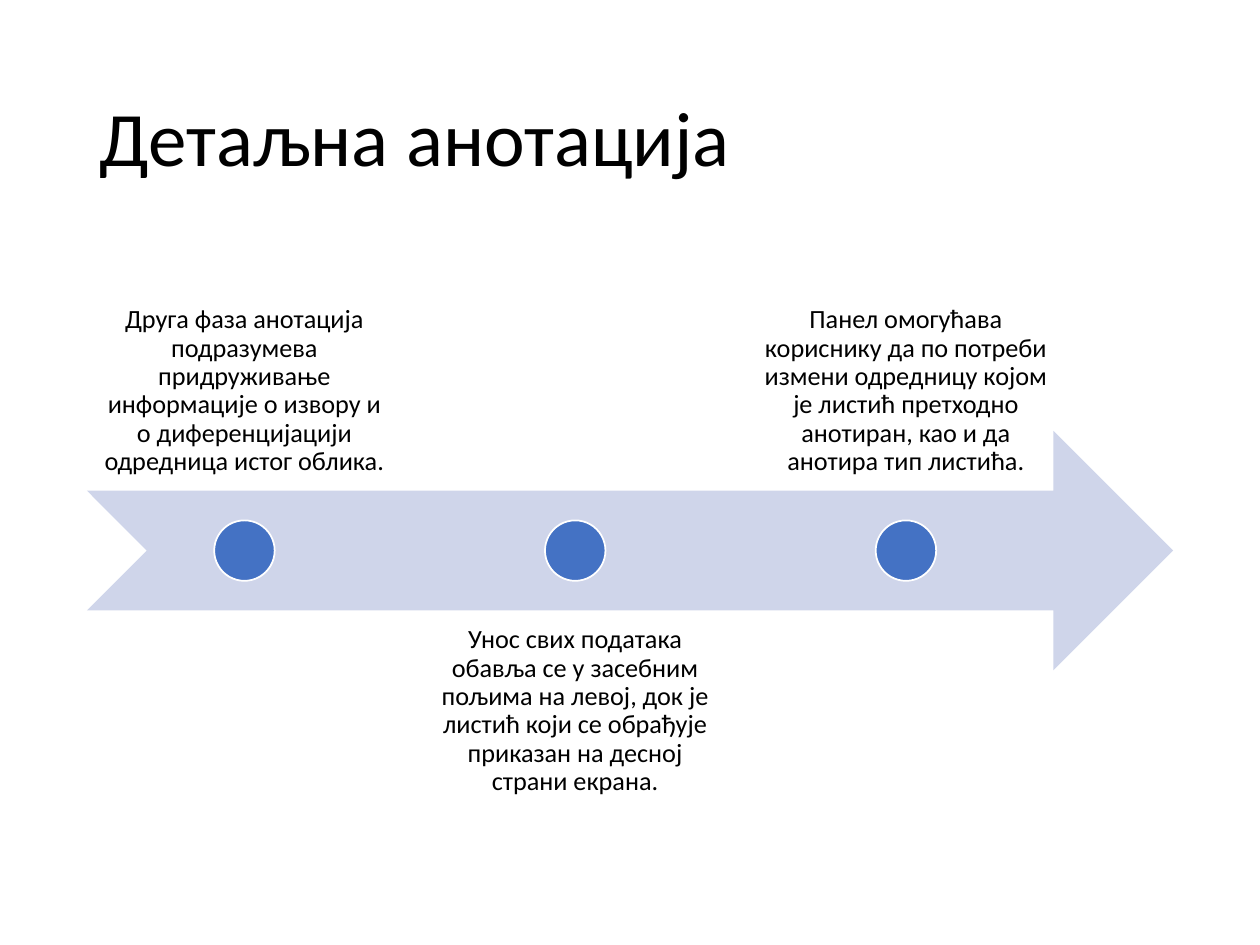
from dataclasses import dataclass

from pptx import Presentation
from pptx.dml.color import RGBColor
from pptx.enum.shapes import MSO_SHAPE as Preset
from pptx.enum.text import MSO_ANCHOR as Anchor, PP_ALIGN as Align
from pptx.util import Inches, Pt


@dataclass(frozen=True)
class Theme:
    font: str = "Calibri"
    ink: RGBColor = RGBColor(0x00, 0x00, 0x00)
    band: RGBColor = RGBColor(0xCF, 0xD5, 0xEA)
    marker: RGBColor = RGBColor(0x44, 0x72, 0xC4)
    outline: RGBColor = RGBColor(0xFF, 0xFF, 0xFF)
    title_size: Pt = Pt(44)
    step_size: Pt = Pt(15)
    line_spacing: float = 0.9


THEME = Theme()
LEFT, WIDTH = 0.69, 8.62
BAND_TOP, BAND_HEIGHT = 3.42, 1.9
STEP_WIDTH, STEP_PITCH = 2.5, 2.625
ABOVE_TOP, BELOW_TOP = 2, 4.85
MARKER_SIZE = 0.48
STEPS = (
    "Друга фаза анотација подразумева придруживање информације о извору "
    "и о диференцијацији одредница истог облика.",
    "Унос свих података обавља се у засебним пољима на левој, док је листић "
    "који се обрађује приказан на десној страни екрана.",
    "Панел омогућава кориснику да по потреби измени одредницу којом је листић "
    "претходно анотиран, као и да анотира тип листића.",
)


def add_text(slide, wording, box, size, anchor, align, insets):
    frame = slide.shapes.add_textbox(*map(Inches, box)).text_frame
    frame.word_wrap = True
    frame.vertical_anchor = anchor
    frame.margin_left = frame.margin_right = Inches(insets[0])
    frame.margin_top = frame.margin_bottom = Inches(insets[1])
    paragraph = frame.paragraphs[0]
    paragraph.alignment = align
    paragraph.line_spacing = THEME.line_spacing
    run = paragraph.add_run()
    run.text = wording
    run.font.name = THEME.font
    run.font.size = size
    run.font.color.rgb = THEME.ink


def add_figure(slide, preset, box, fill, outline=None):
    figure = slide.shapes.add_shape(preset, *map(Inches, box))
    figure.shadow.inherit = False
    figure.fill.solid()
    figure.fill.fore_color.rgb = fill
    if outline is None:
        figure.line.fill.background()
    else:
        figure.line.color.rgb = outline
        figure.line.width = Pt(1)


def add_step(slide, index, wording):
    left = LEFT + index * STEP_PITCH
    above = index % 2 == 0
    top, anchor = (ABOVE_TOP, Anchor.BOTTOM) if above else (BELOW_TOP, Anchor.TOP)
    add_text(slide, wording, (left, top, STEP_WIDTH, BAND_HEIGHT),
             THEME.step_size, anchor, Align.CENTER, (0.12, 0.12))
    marker_left = left + (STEP_WIDTH - MARKER_SIZE) / 2
    marker_top = BAND_TOP + (BAND_HEIGHT - MARKER_SIZE) / 2
    add_figure(slide, Preset.OVAL,
               (marker_left, marker_top, MARKER_SIZE, MARKER_SIZE),
               THEME.marker, THEME.outline)


def main():
    deck = Presentation()
    deck.slide_width, deck.slide_height = Inches(10), Inches(7.5)
    slide = deck.slides.add_slide(deck.slide_layouts[6])
    add_text(slide, "Детаљна анотација", (LEFT, 0.4, WIDTH, 1.45),
             THEME.title_size, Anchor.MIDDLE, Align.LEFT, (0.1, 0.05))
    add_figure(slide, Preset.NOTCHED_RIGHT_ARROW,
               (LEFT, BAND_TOP, WIDTH, BAND_HEIGHT), THEME.band)
    for index, wording in enumerate(STEPS):
        add_step(slide, index, wording)
    deck.save("out.pptx")


if __name__ == "__main__":
    main()
